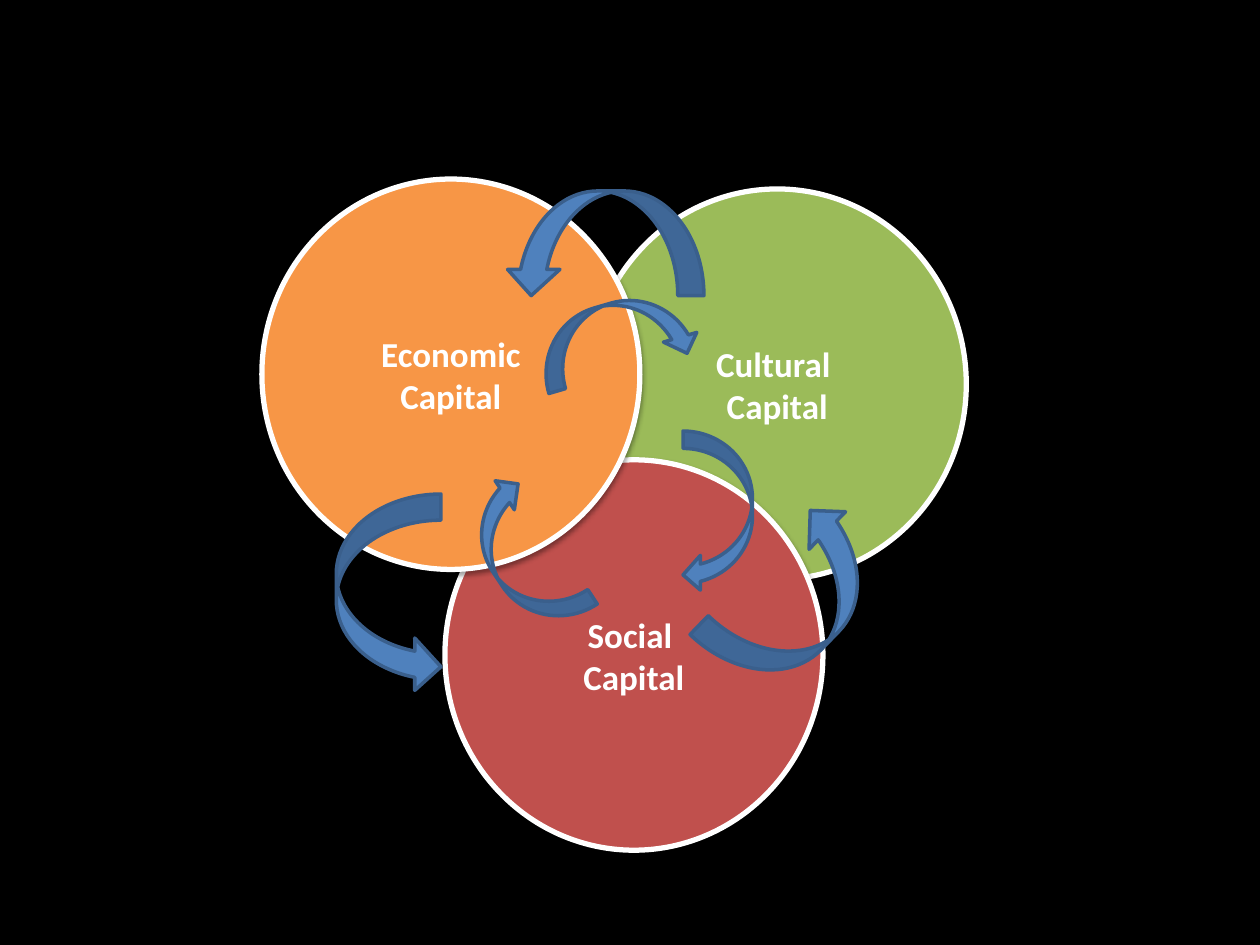
from pptx import Presentation
from pptx.dml.color import RGBColor
from pptx.enum.shapes import MSO_SHAPE as Preset
from pptx.enum.text import MSO_ANCHOR as Anchor, PP_ALIGN as Align
from pptx.oxml import parse_xml
from pptx.oxml.ns import nsdecls
from pptx.util import Cm, Pt

COLORS = {
    "background": "000000",
    "white": "FFFFFF",
    "cultural": "9BBB59",
    "social": "C0504D",
    "economic": "F79646",
    "arrow": "4F81BD",
    "arrow_edge": "3A5F8C",
}
FONT = "Calibri"
BLANK_LAYOUT = 6
CIRCLE_SIZE = (7.62, 7.87)
LARGE_ARROW = (2.11, 4.01)
SMALL_ARROW = (1.4, 3.25)


def color(name):
    return RGBColor.from_string(COLORS[name])


def write_text(frame, lines, size=20, bold=True, ink="white", align=Align.CENTER):
    frame.word_wrap = True
    frame.vertical_anchor = Anchor.MIDDLE
    for index, line in enumerate(lines):
        para = frame.add_paragraph() if index else frame.paragraphs[0]
        para.alignment = align
        span = para.add_run()
        span.text = line
        span.font.name = FONT
        span.font.size = Pt(size)
        span.font.bold = bold
        span.font.color.rgb = color(ink)


class CapitalSlide:
    """Holds the style and the current slide."""

    def __init__(self, deck):
        self.page = deck.slides.add_slide(deck.slide_layouts[BLANK_LAYOUT])
        fill = self.page.background.fill
        fill.solid()
        fill.fore_color.rgb = color("background")

    def shape(self, preset, left, top, size, fill, edge, weight):
        box = self.page.shapes.add_shape(
            preset, Cm(left), Cm(top), Cm(size[0]), Cm(size[1]))
        box.shadow.inherit = False
        box.fill.solid()
        box.fill.fore_color.rgb = color(fill)
        box.line.color.rgb = color(edge)
        box.line.width = Pt(weight)
        return box

    def circle(self, left, top, fill, lines):
        box = self.shape(Preset.OVAL, left, top, CIRCLE_SIZE, fill, "white", 3)
        write_text(box.text_frame, lines)
        # Soft shadow falling straight down
        effects = box.element.spPr.find(
            "{http://schemas.openxmlformats.org/drawingml/2006/main}effectLst")
        effects.append(parse_xml(
            f'<a:outerShdw {nsdecls("a")} blurRad="{Pt(3.1)}" dist="{Pt(1.6)}" '
            'dir="5400000" rotWithShape="0"><a:srgbClr val="000000">'
            '<a:alpha val="38000"/></a:srgbClr></a:outerShdw>'))

    def arrow(self, preset, left, top, size, rotation):
        box = self.shape(preset, left, top, size, "arrow", "arrow_edge", 2)
        box.rotation = rotation


def main():
    deck = Presentation()
    deck.slide_width, deck.slide_height = Cm(25.4), Cm(19.05)
    slide = CapitalSlide(deck)

    # Overlapping forms of capital
    slide.circle(11.86, 3.81, "cultural", ["Cultural ", "Capital"])
    slide.circle(8.97, 9.27, "social", ["Social ", "Capital"])
    slide.circle(5.28, 3.61, "economic", ["Economic Capital"])

    # Outer exchanges: economic to social, cultural to economic, social to cultural
    for left, top, rotation in [(6.78, 9.96, 0), (11.13, 2.9, 90), (15.01, 10.08, 224.1)]:
        slide.arrow(Preset.CURVED_RIGHT_ARROW, left, top, LARGE_ARROW, rotation)

    # Inner exchanges: cultural to social, social to economic, economic to cultural
    for left, top, rotation in [(13.77, 8.69, 0), (9.86, 9.58, 146.6), (11.73, 5.18, 253.8)]:
        slide.arrow(Preset.CURVED_LEFT_ARROW, left, top, SMALL_ARROW, rotation)

    deck.save("out.pptx")


if __name__ == "__main__":
    main()
